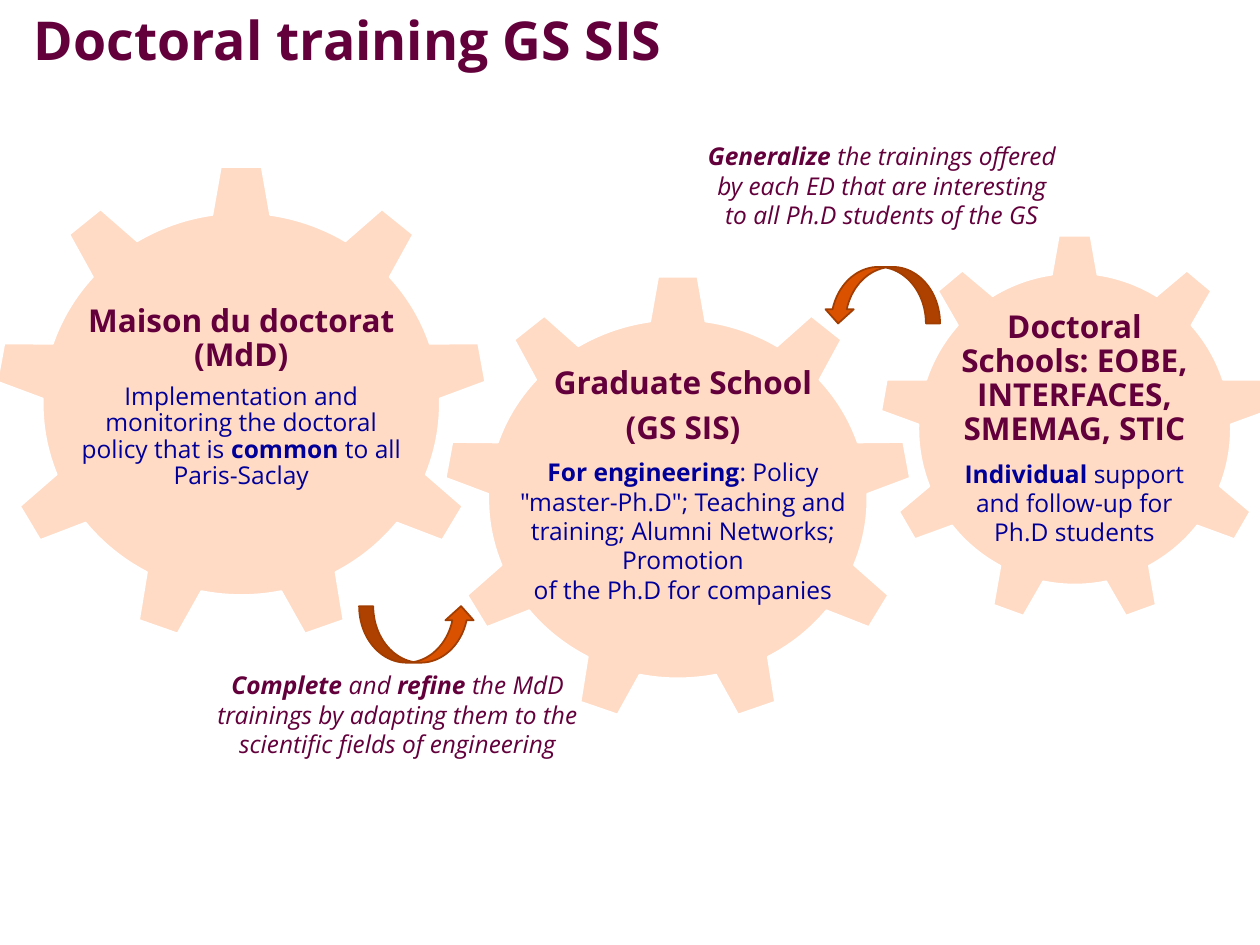
from dataclasses import dataclass

from pptx import Presentation
from pptx.dml.color import RGBColor
from pptx.enum.shapes import MSO_SHAPE
from pptx.enum.text import MSO_ANCHOR, MSO_AUTO_SIZE, PP_ALIGN
from pptx.util import Cm, Pt

FONT = "Open Sans"
PLUM, NAVY, PEACH = "63003C", "000099", "FFDBC5"
ORANGE, RUST, WHITE = "DA5200", "A13D00", "FFFFFF"

Box = tuple[float, float, float, float]


@dataclass
class Para:
    runs: list[tuple[str, bool]]
    size: float = 14
    color: str = NAVY
    italic: bool = False
    tight: bool = False
    align: PP_ALIGN = PP_ALIGN.CENTER


@dataclass
class Gear:
    box: Box
    text_box: Box
    paras: list[Para]


@dataclass
class Caption:
    box: Box
    runs: list[tuple[str, bool]]


@dataclass
class Arrow:
    box: Box
    rotation: float = 0


def heading(text: str) -> Para:
    return Para([(text, True)], size=18, color=PLUM, tight=True)


GEARS = [
    Gear((8.94, 5.54, 9.45, 9.04), (9.96, 6.68, 7.62, 6.22), [
        heading("Graduate School"),
        heading("(GS SIS)"),
        Para([("For engineering", True),
              (': Policy "master-Ph.D"; Teaching and training; Alumni Networks; Promotion', False)]),
        Para([("of the Ph.D for companies", False)]),
    ]),
    Gear((-0.1, 3.33, 9.93, 9.63), (1.6, 5.54, 6.53, 4.95), [
        heading("Maison du doctorat (MdD)"),
        Para([("Implementation and monitoring the doctoral policy that is ", False),
              ("common", True), (" to all Paris-Saclay", False)], tight=True),
    ]),
    Gear((17.73, 4.72, 7.87, 7.85), (19.3, 6.63, 4.72, 4.04), [
        heading("Doctoral Schools: EOBE, INTERFACES, SMEMAG, STIC"),
        Para([("Individual", True), (" support and follow-up for Ph.D students", False)]),
    ]),
]

CAPTIONS = [
    Caption((3.71, 13.39, 8.61, 2.06), [
        ("Complete", True), (" and ", False), ("refine ", True),
        ("the MdD trainings by adapting them to the scientific fields of engineering", False)]),
    Caption((14.02, 2.72, 7.52, 2.06), [
        ("Generalize", True),
        (" the trainings offered by each ED that are interesting to all Ph.D students of the GS", False)]),
]

ARROWS = [
    Arrow((7.24, 12.22, 2.34, 1.14)),
    Arrow((16.61, 5.38, 2.34, 1.14), rotation=180),
]


def rgb(value: str) -> RGBColor:
    return RGBColor.from_string(value)


def place(box: Box) -> list[Cm]:
    return [Cm(v) for v in box]


def add_run(p, text: str, *, size: float, color: str, bold: bool, italic: bool = False) -> None:
    r = p.add_run()
    r.text = text
    r.font.name = FONT
    r.font.size = Pt(size)
    r.font.bold = bold
    r.font.italic = italic
    r.font.color.rgb = rgb(color)


def write(tf, paras: list[Para]) -> None:
    tf.word_wrap = True
    for i, para in enumerate(paras):
        p = tf.add_paragraph() if i else tf.paragraphs[0]
        p.alignment = para.align
        p.space_before = Pt(0)
        if para.tight:
            p.line_spacing = 0.9
            p.space_after = Pt(round(0.35 * para.size, 1))
        for text, bold in para.runs:
            add_run(p, text, size=para.size, color=para.color, bold=bold, italic=para.italic)


def draw_shape(shapes, kind: MSO_SHAPE, box: Box, fill: str, line: str):
    sp = shapes.add_shape(kind, *place(box))
    sp.shadow.inherit = False
    sp.fill.solid()
    sp.fill.fore_color.rgb = rgb(fill)
    sp.line.color.rgb = rgb(line)
    sp.line.width = Pt(1)
    return sp


def draw_gear(s, gear: Gear) -> None:
    shapes = s.shapes.add_group_shape().shapes
    draw_shape(shapes, MSO_SHAPE.GEAR_9, gear.box, PEACH, WHITE)
    tf = shapes.add_textbox(*place(gear.text_box)).text_frame
    tf.vertical_anchor = MSO_ANCHOR.MIDDLE
    tf.margin_left = tf.margin_right = tf.margin_top = tf.margin_bottom = Cm(0.03)
    write(tf, gear.paras)


def draw_caption(s, caption: Caption) -> None:
    tf = s.shapes.add_textbox(*place(caption.box)).text_frame
    tf.auto_size = MSO_AUTO_SIZE.SHAPE_TO_FIT_TEXT
    write(tf, [Para(caption.runs, color=PLUM, italic=True)])


def draw_arrow(s, arrow: Arrow) -> None:
    sp = draw_shape(s.shapes, MSO_SHAPE.CURVED_UP_ARROW, arrow.box, ORANGE, RUST)
    sp.rotation = arrow.rotation


def set_title(s, text: str) -> None:
    title = s.shapes.title
    title.left, title.top, title.width, title.height = place((0.43, 0.15, 25.2, 2.62))
    tf = title.text_frame
    tf.auto_size = MSO_AUTO_SIZE.NONE
    tf.vertical_anchor = MSO_ANCHOR.TOP
    write(tf, [Para([(text, True)], size=30.6, color=PLUM, tight=True, align=PP_ALIGN.LEFT)])


def main() -> None:
    prs = Presentation()
    prs.slide_width, prs.slide_height = Cm(25.4), Cm(19.05)
    s = prs.slides.add_slide(prs.slide_layouts[5])
    set_title(s, "Doctoral training GS SIS")
    for gear in GEARS:
        draw_gear(s, gear)
    for caption in CAPTIONS:
        draw_caption(s, caption)
    for arrow in ARROWS:
        draw_arrow(s, arrow)
    prs.save("out.pptx")


if __name__ == "__main__":
    main()
